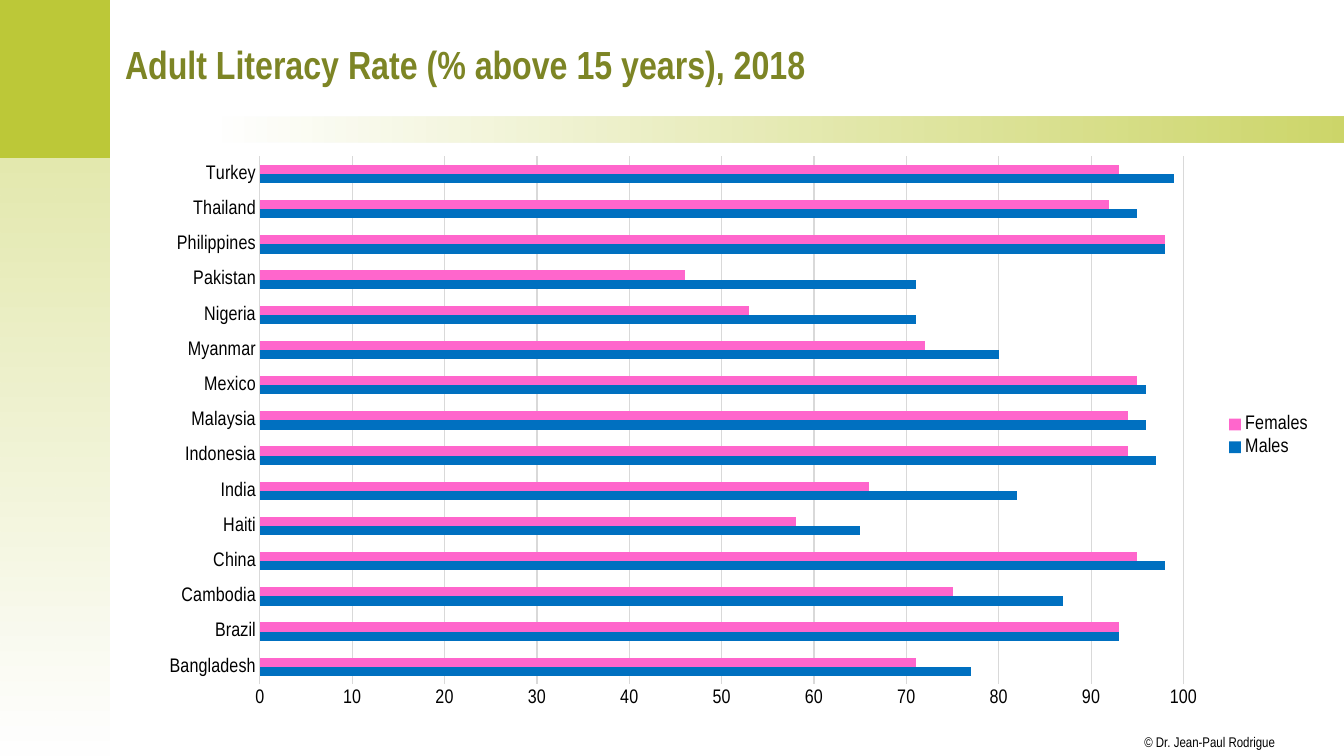
from lxml.etree import SubElement
from pptx import Presentation
from pptx.chart.data import CategoryChartData
from pptx.dml.color import RGBColor
from pptx.enum.chart import XL_CHART_TYPE as ChartType, XL_LEGEND_POSITION as LegendPos
from pptx.enum.chart import XL_TICK_MARK as TickMark
from pptx.enum.shapes import MSO_SHAPE as Shape
from pptx.enum.text import MSO_ANCHOR as Anchor, MSO_AUTO_SIZE as AutoSize, PP_ALIGN as Align
from pptx.oxml.ns import qn
from pptx.util import Inches, Pt

WIDTH, HEIGHT = 13.33, 7.5
SIDEBAR, HEADER = 1.09, 1.57
FONT = "Arial Narrow"
LIME, PALE, WHITE, OLIVE, BLACK, GREY = "BCC838", "E4E9AF", "FFFFFF", "7D8525", "000000", "D9D9D9"
SERIES_COLORS = {"Males": "0070C0", "Females": "FF66CC"}
LITERACY = {
    "Bangladesh": (77, 71), "Brazil": (93, 93), "Cambodia": (87, 75),
    "China": (98, 95), "Haiti": (65, 58), "India": (82, 66),
    "Indonesia": (97, 94), "Malaysia": (96, 94), "Mexico": (96, 95),
    "Myanmar": (80, 72), "Nigeria": (71, 53), "Pakistan": (71, 46),
    "Philippines": (98, 98), "Thailand": (95, 92), "Turkey": (99, 93),
}


def color(value):
    """Turn a hex string into a colour."""
    return RGBColor.from_string(value)


def apply(target, formats):
    """Set every attribute in a dict of format values."""
    for key, value in formats.items():
        setattr(target, key, value)


def style_font(font, size, ink=BLACK, bold=False):
    """Give a font the face, size, weight and colour of the slide."""
    apply(font, {"name": FONT, "size": Pt(size), "bold": bold})
    font.color.rgb = color(ink)


def emu(box):
    """Convert a box in inches to slide lengths."""
    return [Inches(length) for length in box]


def add_panel(slide, box, stops, angle=0):
    """Draw a borderless rectangle, solid for one stop and graded for two."""
    panel = slide.shapes.add_shape(Shape.RECTANGLE, *emu(box))
    panel.shadow.inherit = False
    panel.line.fill.background()
    if len(stops) == 1:
        panel.fill.solid()
        panel.fill.fore_color.rgb = color(stops[0][0])
        return
    panel.fill.gradient()
    panel.fill.gradient_angle = angle
    gradient_stops = panel.fill.gradient_stops
    for stop, position, (tint, _) in zip(gradient_stops, (0, 1), stops):
        stop.position = position
        stop.color.rgb = color(tint)
    tints = panel.fill._xPr.iter(qn("a:srgbClr"))
    for tint, (_, opacity) in zip(tints, stops):
        if opacity < 100:
            SubElement(tint, qn("a:alpha"), val=str(opacity * 1000))


def add_backdrop(slide, box):
    """Draw the corner block, the fading sidebar and the band under the title."""
    left, top, width, height = box
    add_panel(slide, (left, top, SIDEBAR, HEADER), [(LIME, 100)])
    sidebar = (left, top + HEADER, SIDEBAR, height - HEADER)
    for _ in range(2):
        add_panel(slide, sidebar, [(PALE, 100), (WHITE, 75)], 270)
    band_left = left + 2.09
    add_panel(slide, (band_left, top + 1.16, width - band_left, 0.25), [(WHITE, 75), (LIME, 75)])


def add_title(slide, box):
    """Fill and place the title."""
    title = slide.shapes.title
    apply(title, dict(zip(("left", "top", "width", "height"), emu(box))))
    title.text_frame.text = "Adult Literacy Rate (% above 15 years), 2018"
    apply(title.text_frame, {"vertical_anchor": Anchor.MIDDLE, "word_wrap": True,
                             "auto_size": AutoSize.NONE})
    heading = title.text_frame.paragraphs[0]
    heading.alignment = Align.LEFT
    style_font(heading.runs[0].font, 28, OLIVE, True)


def add_copyright(slide, box):
    """Write the copyright line."""
    frame = slide.shapes.add_textbox(*emu(box)).text_frame
    apply(frame, {"margin_left": 0, "margin_top": 0, "margin_right": 0, "margin_bottom": 0,
                  "word_wrap": False, "auto_size": AutoSize.SHAPE_TO_FIT_TEXT})
    frame.text = "© Dr. Jean-Paul Rodrigue"
    style_font(frame.paragraphs[0].runs[0].font, 10)


def set_plot_area(chart, shares):
    """Fix the inner plot area as shares of the chart."""
    plot_area = chart._chartSpace.chart.plotArea
    layout = plot_area.find(qn("c:layout"))
    if layout is None:
        layout = SubElement(plot_area, qn("c:layout"))
        plot_area.insert(0, layout)
    manual = SubElement(layout, qn("c:manualLayout"))
    settings = [("layoutTarget", "inner"), ("xMode", "edge"), ("yMode", "edge")]
    for tag, value in settings + list(zip("xywh", shares)):
        SubElement(manual, qn(f"c:{tag}"), val=str(value))


def add_literacy_chart(slide, box):
    """Draw the bars of literacy by country and sex."""
    data = CategoryChartData()
    data.categories = list(LITERACY)
    for name, rates in zip(SERIES_COLORS, zip(*LITERACY.values())):
        data.add_series(name, rates)
    chart = slide.shapes.add_chart(ChartType.BAR_CLUSTERED, *emu(box), data).chart
    apply(chart, {"has_title": False, "has_legend": True})
    apply(chart.legend, {"position": LegendPos.RIGHT, "include_in_layout": False})
    countries, rates = chart.category_axis, chart.value_axis
    for axis in (countries, rates):
        apply(axis, {"major_tick_mark": TickMark.NONE, "minor_tick_mark": TickMark.NONE})
    apply(rates, {"minimum_scale": 0, "maximum_scale": 100, "major_unit": 10,
                  "has_major_gridlines": True})
    rates.format.line.fill.background()
    for line in (countries.format.line, rates.major_gridlines.format.line):
        line.color.rgb = color(GREY)
        line.width = Pt(0.75)
    for font in (chart.font, chart.legend.font, countries.tick_labels.font, rates.tick_labels.font):
        style_font(font, 14)
    bars = chart.plots[0]
    apply(bars, {"gap_width": 182, "overlap": 0, "vary_by_categories": False})
    for series in bars.series:
        series.format.fill.solid()
        series.format.fill.fore_color.rgb = color(SERIES_COLORS[series.name])
    set_plot_area(chart, (0.123, 0.021, 0.762, 0.905))


def main():
    """Build and save the slide."""
    deck = Presentation()
    apply(deck, {"slide_width": Inches(WIDTH), "slide_height": Inches(HEIGHT)})
    slide = deck.slides.add_slide(deck.slide_layouts[5])
    add_backdrop(slide, (0, 0, WIDTH, HEIGHT))
    add_copyright(slide, (11.35, 7.28, 1.31, 0.17))
    add_title(slide, (1.14, 0.11, 11.97, 1.04))
    add_literacy_chart(slide, (1.1, 1.43, 12.02, 5.79))
    deck.save("out.pptx")


if __name__ == "__main__":
    main()
